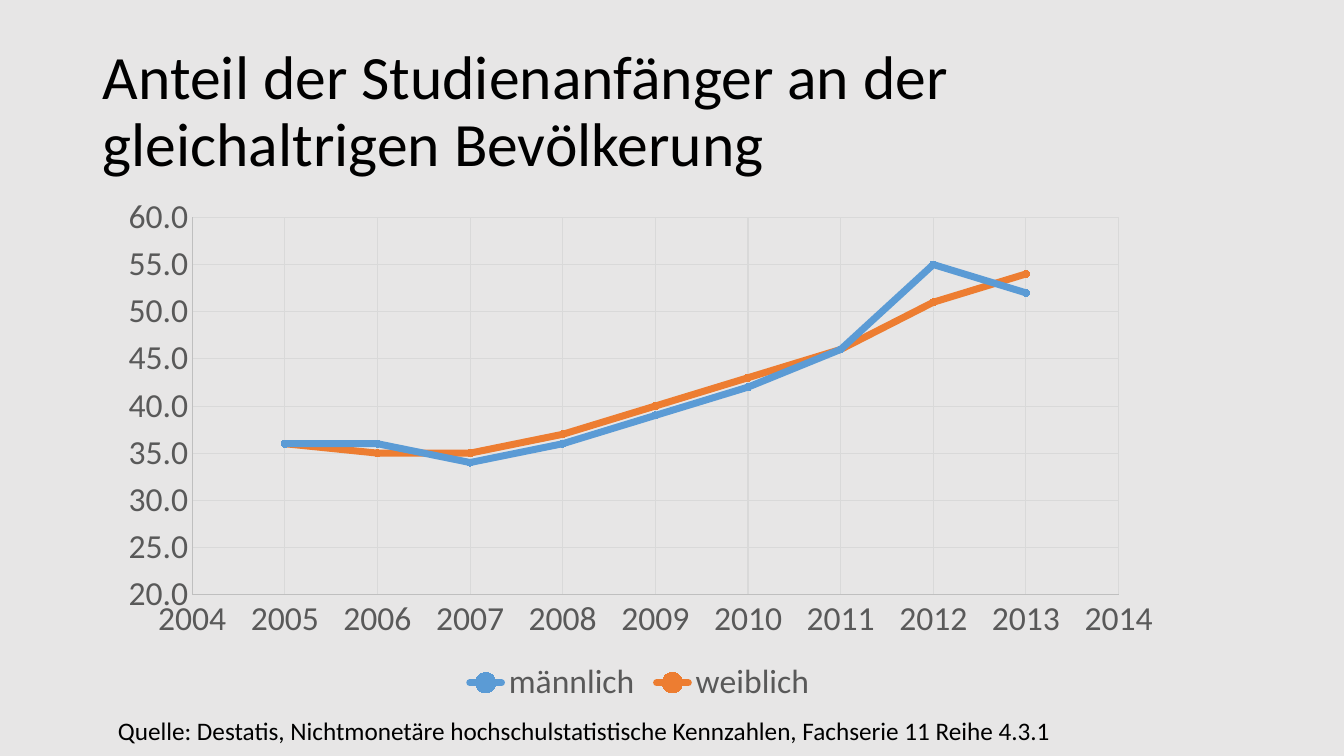
from lxml import etree
from pptx import Presentation
from pptx import util as u
from pptx.chart.data import XyChartData
from pptx.dml.color import RGBColor
from pptx.enum import chart as kinds
from pptx.enum import text
from pptx.oxml.ns import qn

PX = 914400 / 100.8
FONT = "Calibri"
BLACK = RGBColor(0x00, 0x00, 0x00)
BACKGROUND = RGBColor(0xE7, 0xE6, 0xE6)
LABEL_GREY = RGBColor(0x59, 0x59, 0x59)
AXIS_GREY = RGBColor(0xBF, 0xBF, 0xBF)
GRID_GREY = RGBColor(0xD9, 0xD9, 0xD9)
BLUE = RGBColor(0x5B, 0x9B, 0xD5)
ORANGE = RGBColor(0xED, 0x7D, 0x31)

FIRST_YEAR = 2005
SHARES = [
    ("männlich", BLUE, [36, 36, 34, 36, 39, 42, 46, 55, 52]),
    ("weiblich", ORANGE, [36, 35, 35, 37, 40, 43, 46, 51, 54]),
]


def px(*lengths):
    """Turn pixel lengths into EMU."""
    return [u.Emu(round(length * PX)) for length in lengths]


def style_font(font, size, color):
    """Set typeface, size and colour of a font."""
    font.name = FONT
    font.size = u.Pt(size)
    font.color.rgb = color


def style_line(line, color, width):
    """Set colour and width of a line."""
    line.color.rgb = color
    line.width = u.Pt(width)


def add_text(page, words, area, size, anchor, wrap, spacing):
    """Add a text box with one paragraph."""
    box = page.shapes.add_textbox(*px(*area))
    frame = box.text_frame
    frame.text = words
    frame.word_wrap = wrap
    frame.vertical_anchor = anchor
    para = frame.paragraphs[0]
    para.line_spacing = spacing
    style_font(para.runs[0].font, size, BLACK)


def style_axis(axis, low, high, step, number_format):
    """Set scale, labels, line and grid of a chart axis."""
    axis.minimum_scale, axis.maximum_scale, axis.major_unit = low, high, step
    axis.major_tick_mark = axis.minor_tick_mark = kinds.XL_TICK_MARK.NONE
    axis.tick_labels.number_format = number_format
    axis.tick_labels.number_format_is_linked = False
    style_font(axis.tick_labels.font, 24, LABEL_GREY)
    style_line(axis.format.line, AXIS_GREY, 0.75)
    axis.has_major_gridlines = True
    style_line(axis.major_gridlines.format.line, GRID_GREY, 0.75)


def place_plot(chart, x, y, w, h):
    """Fix the inner plot area as fractions of the chart."""
    area = chart.element.find(".//" + qn("c:plotArea"))
    for layout in area.findall(qn("c:layout")):
        area.remove(layout)
    layout = etree.Element(qn("c:layout"))
    manual = etree.SubElement(layout, qn("c:manualLayout"))
    settings = [("layoutTarget", "inner"), ("xMode", "edge"), ("yMode", "edge"),
                ("x", x), ("y", y), ("w", w), ("h", h)]
    for name, value in settings:
        etree.SubElement(manual, qn("c:" + name)).set("val", str(value))
    area.insert(0, layout)


def style_series(series, color):
    """Give a series its line and round markers."""
    series.smooth = False
    style_line(series.format.line, color, 5)
    marker = series.marker
    marker.style = kinds.XL_MARKER_STYLE.CIRCLE
    marker.size = 5
    marker.format.fill.solid()
    marker.format.fill.fore_color.rgb = color
    marker.format.line.color.rgb = color


def round_line_ends(chart):
    """Give the lines of all series round ends and joins."""
    steps = [qn(tag) for tag in ("c:ser", "c:spPr", "a:ln")]
    for line in chart.element.findall(".//" + "/".join(steps)):
        line.set("cap", "rnd")
        etree.SubElement(line, qn("a:round"))


def add_share_chart(page, area):
    """Add the scatter chart of shares by year."""
    data = XyChartData(number_format="0.0")
    for name, _, shares in SHARES:
        series = data.add_series(name)
        for year, share in enumerate(shares, FIRST_YEAR):
            series.add_data_point(year, share)
    kind = kinds.XL_CHART_TYPE.XY_SCATTER_LINES
    chart = page.shapes.add_chart(kind, *px(*area), data).chart
    chart.has_title = False
    style_font(chart.font, 24, BLACK)
    plot = chart.plots[0]
    plot.vary_by_categories = False
    for series, (_, color, _) in zip(plot.series, SHARES):
        style_series(series, color)
    round_line_ends(chart)
    style_axis(chart.category_axis, 2004, 2014, 1, "General")
    style_axis(chart.value_axis, 20, 60, 5, "0.0")
    chart.has_legend = True
    chart.legend.position = kinds.XL_LEGEND_POSITION.BOTTOM
    chart.legend.include_in_layout = False
    style_font(chart.legend.font, 24, LABEL_GREY)
    place_plot(chart, 0.08, 0.06, 0.87, 0.72)


def main():
    """Build and save the slide."""
    deck = Presentation()
    deck.slide_width, deck.slide_height = px(1344, 756)
    page = deck.slides.add_slide(deck.slide_layouts[6])
    page.background.fill.solid()
    page.background.fill.fore_color.rgb = BACKGROUND
    add_text(page, "Anteil der Studienanfänger an der gleichaltrigen Bevölkerung",
             (93, 40, 1159, 146), 44, text.MSO_ANCHOR.MIDDLE, True, 0.9)
    add_share_chart(page, (107, 186, 1065, 524))
    add_text(page, "Quelle: Destatis, Nichtmonetäre hochschulstatistische Kennzahlen, "
             "Fachserie 11 Reihe 4.3.1",
             (108, 710, 966, 40), 18, text.MSO_ANCHOR.TOP, False, 1.0)
    deck.save("out.pptx")


if __name__ == "__main__":
    main()
